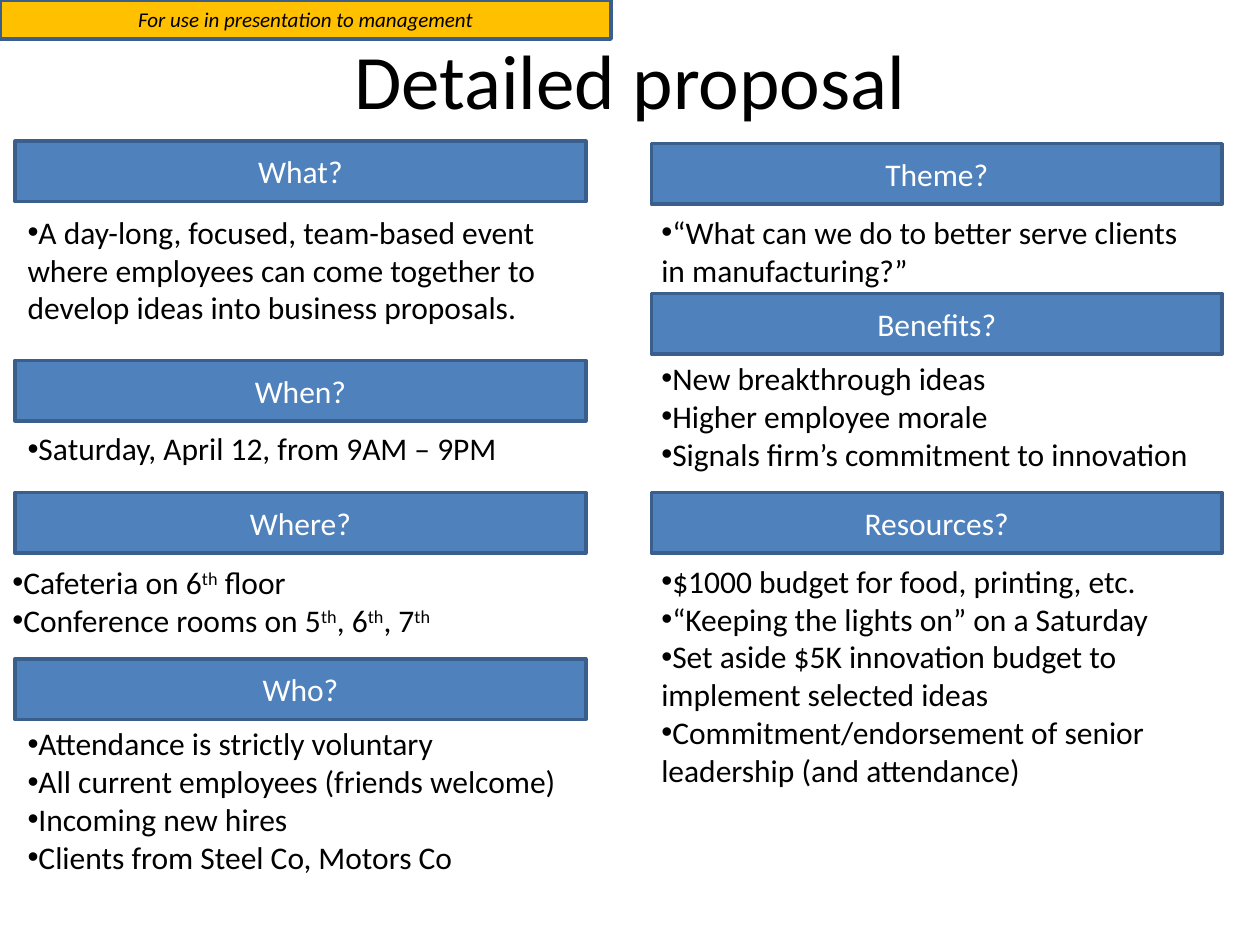
import pptx
import pptx.dml.color
import pptx.enum.shapes
import pptx.enum.text
import pptx.oxml
import pptx.oxml.ns
import pptx.util

Pt = pptx.util.Pt
COLORS = {"bar": "4F81BD", "outline": "3A5F8C", "banner": "FFC000", "dark": "000000", "light": "FFFFFF"}


def rgb(name):
    return pptx.dml.color.RGBColor.from_string(COLORS[name])


def add_text(box, lines, size, color, centered=True, italic=False):
    """Fill a box with paragraphs; parts between carets are superscript."""
    frame = box.text_frame
    frame.word_wrap = True
    if centered:
        frame.vertical_anchor = pptx.enum.text.MSO_ANCHOR.MIDDLE
    frame.text = "\n".join(line.replace("^", "") for line in lines)
    for paragraph, line in zip(frame.paragraphs, lines):
        if centered:
            paragraph.alignment = pptx.enum.text.PP_ALIGN.CENTER
        parts = line.split("^")
        paragraph.runs[0].text = parts[0]
        for part in parts[1:]:
            if part:
                paragraph.add_run().text = part
        for index, run in enumerate(paragraph.runs):
            run.font.name = "Calibri"
            run.font.size = Pt(size)
            run.font.italic = italic
            run.font.color.rgb = rgb(color)
            if index % 2:
                run._r.get_or_add_rPr().set("baseline", "30000")


deck = pptx.Presentation()
deck.slide_width, deck.slide_height = Pt(720), Pt(540)
slide = deck.slides.add_slide(deck.slide_layouts[6])

title = slide.shapes.add_textbox(Pt(36), Pt(0), Pt(648), Pt(90))
add_text(title, ["Detailed proposal"], 44, "dark")

# Bars: left, top, width, height, label, text size, text colour, fill
LEFT, RIGHT = 8.64, 372.24
headings = [
    (LEFT, 80.64, "What?"),
    (LEFT, 205.92, "When?"),
    (LEFT, 281.52, "Where?"),
    (LEFT, 376.56, "Who?"),
    (RIGHT, 82.08, "Theme?"),
    (RIGHT, 167.76, "Benefits?"),
    (RIGHT, 281.52, "Resources?"),
]
bars = [(left, top, 326.16, 34.56, label, 18, "light", "bar") for left, top, label in headings]
bars.append((0, 0, 349.2, 22.32, "For use in presentation to management", 12, "dark", "banner"))
for left, top, width, height, label, size, color, fill in bars:
    bar = slide.shapes.add_shape(
        pptx.enum.shapes.MSO_SHAPE.RECTANGLE, Pt(left), Pt(top), Pt(width), Pt(height))
    bar.shadow.inherit = False
    bar.fill.solid()
    bar.fill.fore_color.rgb = rgb(fill)
    bar.line.color.rgb = rgb("outline")
    bar.line.width = Pt(2)
    add_text(bar, [label], size, color, italic=fill == "banner")

# Answers: left, top, width, number of lines the box holds, bullets
RIGHT_TEXT, TEXT_WIDTH = 370.8, 325.44
answers = [
    (LEFT, 118.08, TEXT_WIDTH, 3, [
        "A day-long, focused, team-based event where employees can come together "
        "to develop ideas into business proposals."]),
    (LEFT, 241.92, TEXT_WIDTH, 1, ["Saturday, April 12, from 9AM – 9PM"]),
    (0, 318.24, 334.8, 2, [
        "Cafeteria on 6^th^ floor",
        "Conference rooms on 5^th^, 6^th^, 7^th^"]),
    (LEFT, 410.4, TEXT_WIDTH, 4, [
        "Attendance is strictly voluntary",
        "All current employees (friends welcome)",
        "Incoming new hires",
        "Clients from Steel Co, Motors Co"]),
    (RIGHT_TEXT, 118.08, TEXT_WIDTH, 3, [
        "“What can we do to better serve clients in manufacturing?”"]),
    (RIGHT_TEXT, 201.6, TEXT_WIDTH, 3, [
        "New breakthrough ideas",
        "Higher employee morale",
        "Signals firm’s commitment to innovation"]),
    (RIGHT_TEXT, 317.52, TEXT_WIDTH, 6, [
        "$1000 budget for food, printing, etc.",
        "“Keeping the lights on” on a Saturday",
        "Set aside $5K innovation budget to implement selected ideas",
        "Commitment/endorsement of senior leadership (and attendance)"]),
]
for left, top, width, line_count, bullets in answers:
    answer = slide.shapes.add_textbox(Pt(left), Pt(top), Pt(width), Pt(7 + 21.8 * line_count))
    add_text(answer, bullets, 18, "dark", centered=False)
    answer.text_frame.auto_size = pptx.enum.text.MSO_AUTO_SIZE.SHAPE_TO_FIT_TEXT
    for paragraph in answer.text_frame.paragraphs:
        properties = paragraph._p.get_or_add_pPr()
        font = pptx.oxml.parse_xml(f'<a:buFont {pptx.oxml.ns.nsdecls("a")} typeface="Arial"/>')
        bullet = pptx.oxml.parse_xml(f'<a:buChar {pptx.oxml.ns.nsdecls("a")} char="•"/>')
        properties.extend([font, bullet])

deck.save("out.pptx")
